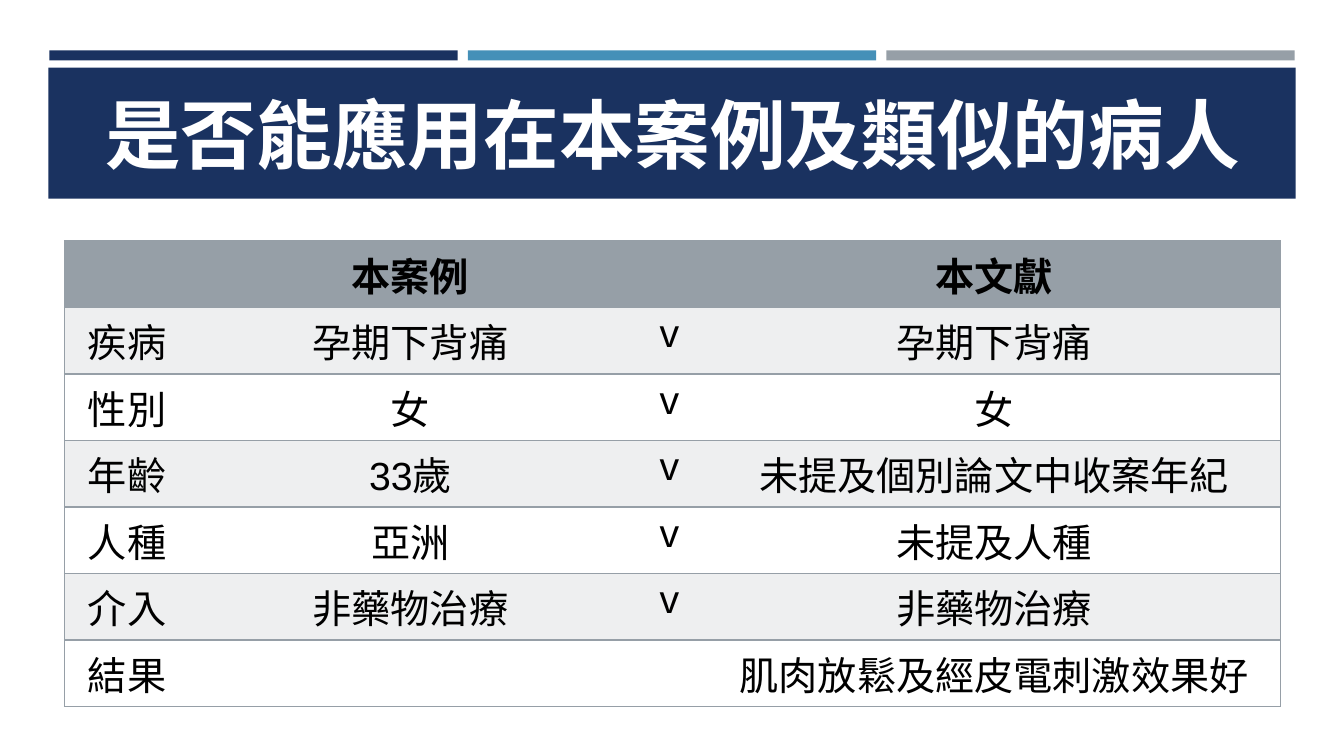
from dataclasses import dataclass
from lxml.etree import SubElement as Sub
from pptx import Presentation
from pptx.dml.color import RGBColor as RGB
from pptx.enum.lang import MSO_LANGUAGE_ID as Lang
from pptx.enum.shapes import MSO_SHAPE as Shape
from pptx.enum.text import MSO_ANCHOR as Anchor, PP_ALIGN as Align
from pptx.oxml.ns import qn
from pptx.util import Inches, Pt


@dataclass(frozen=True)
class Theme:
    navy: str = "1A3260"
    blue: str = "4590B8"
    gray: str = "969FA7"
    band: str = "EEEFF0"
    white: str = "FFFFFF"
    black: str = "000000"
    head: str = "Cabin"
    body: str = "Arial"
    big: int = 54
    text: int = 28
    line: int = 1


class Deck:
    def __init__(self, theme):
        self.theme = theme
        self.file = Presentation()
        self.file.slide_width = Inches(13.33)
        self.file.slide_height = Inches(7.5)
        self.slide = self.file.slides.add_slide(self.file.slide_layouts[6])

    def bar(self, box, color):
        bar = self.slide.shapes.add_shape(Shape.RECTANGLE, *map(Inches, box))
        bar.shadow.inherit = False
        bar.fill.solid()
        bar.fill.fore_color.rgb = RGB.from_string(color)
        bar.line.fill.background()

    def label(self, frame, text, font, size, color, bold):
        para = frame.paragraphs[0]
        para.alignment = Align.CENTER
        run = para.add_run()
        run.text = text
        run.font.name = font
        run.font.size = Pt(size)
        run.font.bold = bold
        run.font.color.rgb = RGB.from_string(color)
        run.font.language_id = Lang.TRADITIONAL_CHINESE

    def title(self, box, text):
        frame = self.slide.shapes.add_textbox(*map(Inches, box)).text_frame
        frame.word_wrap = True
        frame.vertical_anchor = Anchor.MIDDLE
        look = self.theme
        self.label(frame, text, look.head, look.big, look.white, True)

    def edges(self, cell, shown):
        props = cell._tc.get_or_add_tcPr()
        for side in "LRTB":
            line = Sub(props, qn(f"a:ln{side}"), w=str(Pt(self.theme.line)))
            if side in shown:
                fill = Sub(line, qn("a:solidFill"))
                Sub(fill, qn("a:srgbClr"), val=self.theme.gray)
            else:
                Sub(line, qn("a:noFill"))

    def table(self, left, top, widths, high, rows):
        look = self.theme
        table = self.slide.shapes.add_table(
            len(rows), len(widths), Inches(left), Inches(top),
            Inches(sum(widths)), Inches(high * len(rows))).table
        table.first_row = table.horz_banding = False
        for col, width in zip(table.columns, widths):
            col.width = Inches(width)
        last = len(widths) - 1
        for i, row in enumerate(rows):
            table.rows[i].height = Inches(high)
            color = look.gray if i == 0 else look.band if i % 2 else look.white
            for j, text in enumerate(row):
                cell = table.cell(i, j)
                self.edges(cell, "TB" + {0: "L", last: "R"}.get(j, ""))
                cell.fill.solid()
                cell.fill.fore_color.rgb = RGB.from_string(color)
                if text:
                    self.label(cell.text_frame, text, look.body, look.text,
                               look.black, i == 0)


def main():
    theme = Theme()
    deck = Deck(theme)
    for i, color in enumerate((theme.navy, theme.blue, theme.gray)):
        deck.bar((0.49 + 4.15 * i, 0.5, 4.05, 0.1), color)
    deck.bar((0.48, 0.67, 12.37, 1.3), theme.navy)
    deck.title((0.64, 0.77, 12.06, 1.11), "是否能應用在本案例及類似的病人")
    rows = [
        ("", "本案例", "", "本文獻"),
        ("疾病", "孕期下背痛", "v", "孕期下背痛"),
        ("性別", "女", "v", "女"),
        ("年齡", "33歲", "v", "未提及個別論文中收案年紀"),
        ("人種", "亞洲", "v", "未提及人種"),
        ("介入", "非藥物治療", "v", "非藥物治療"),
        ("結果", "", "", "肌肉放鬆及經皮電刺激效果好"),
    ]
    deck.table(0.64, 2.39, (1.24, 4.38, 0.76, 5.68), 0.66, rows)
    deck.file.save("out.pptx")


if __name__ == "__main__":
    main()
